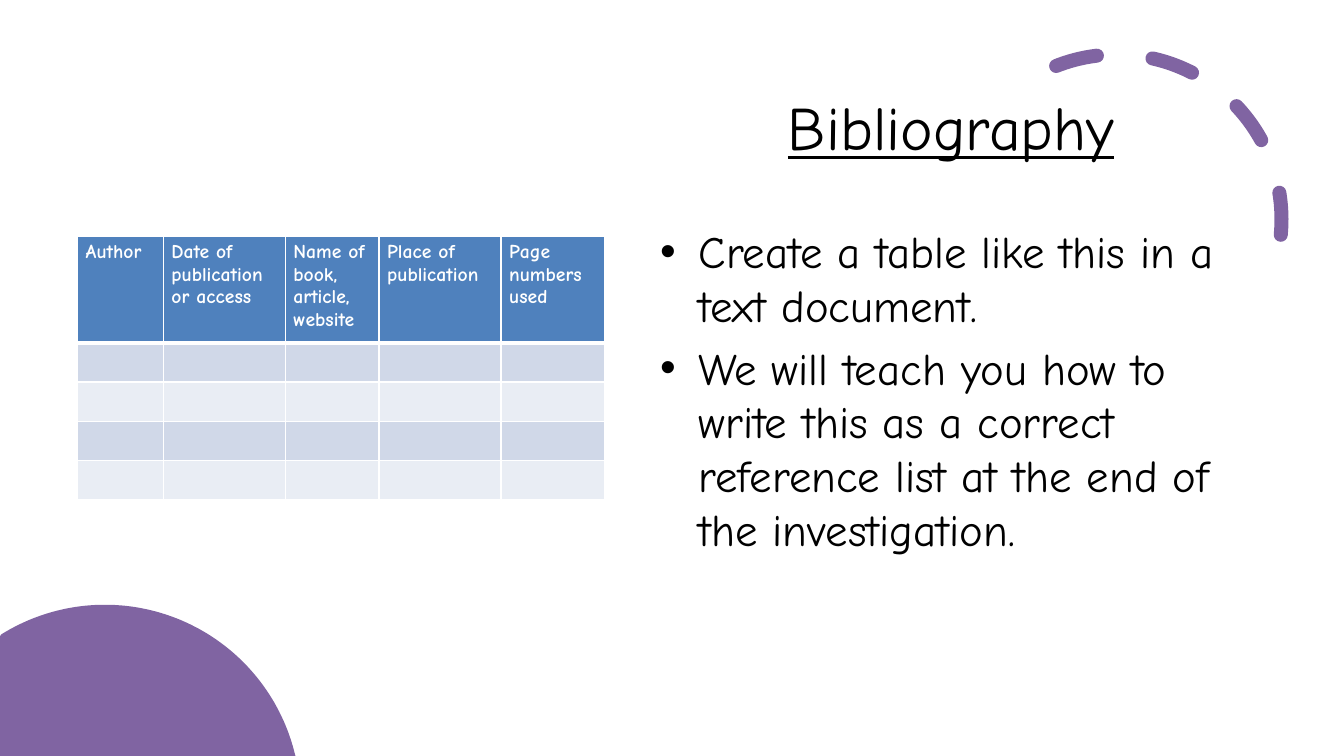
from math import cos, radians, sin

from lxml.etree import SubElement
from pptx import Presentation
from pptx.dml.color import RGBColor
from pptx.enum.dml import MSO_LINE_DASH_STYLE as DASH
from pptx.enum.shapes import MSO_SHAPE as SHAPE
from pptx.enum.text import MSO_ANCHOR as ANCHOR, PP_ALIGN as ALIGN
from pptx.oxml import parse_xml
from pptx.oxml.ns import nsdecls, qn
from pptx.util import Emu, Pt

PURPLE = RGBColor(0x80, 0x64, 0xA2)
BLUE = RGBColor(0x4F, 0x81, 0xBD)
BAND_DARK = RGBColor(0xD0, 0xD8, 0xE8)
BAND_LIGHT = RGBColor(0xE9, 0xED, 0xF4)
WHITE = RGBColor(0xFF, 0xFF, 0xFF)
BLACK = RGBColor(0, 0, 0)


def px(n):
    return Emu(round(n * 9144))


class SlideBuilder:
    font = "Comic Neue"

    def __init__(self, slide):
        self.s = slide

    def run(self, p, text, size, color, bold=None, underline=None):
        r = p.add_run()
        r.text = text
        f = r.font
        f.name, f.size, f.bold, f.underline = self.font, Pt(size), bold, underline
        f.color.rgb = color

    def frame(self, x, y, w, h, anchor=ANCHOR.TOP):
        tf = self.s.shapes.add_textbox(px(x), px(y), px(w), px(h)).text_frame
        tf.word_wrap = True
        tf.vertical_anchor = anchor
        return tf

    def title(self, text, *box):
        p = self.frame(*box, anchor=ANCHOR.MIDDLE).paragraphs[0]
        p.alignment = ALIGN.CENTER
        self.run(p, text, 44, BLACK, underline=True)

    def bullets(self, items, *box):
        tf = self.frame(*box)
        for i, item in enumerate(items):
            p = tf.add_paragraph() if i else tf.paragraphs[0]
            p.space_before = Pt(6.4)
            pPr = p._p.get_or_add_pPr()
            pPr.set("marL", str(px(38)))
            pPr.set("indent", str(px(-38)))
            SubElement(pPr, qn("a:buFont")).set("typeface", "Arial")
            SubElement(pPr, qn("a:buChar")).set("char", "•")
            self.run(p, item, 32, BLACK)

    def dashed_arc(self, x, y, size, rotation, start):
        sp = self.s.shapes.add_shape(SHAPE.ARC, px(x), px(y), px(size), px(size))
        sp.shadow.inherit = False
        sp.adjustments[0], sp.adjustments[1] = start, 0
        sp.rotation = rotation
        sp._element.spPr.find(qn("a:xfrm")).set("flipH", "1")
        sp.fill.background()
        sp.line.color.rgb = PURPLE
        sp.line.width = Pt(10)
        sp.line.dash_style = DASH.DASH
        sp.line._ln.set("cap", "rnd")

    def corner_disc(self, cx, cy, radius, bottom):
        points = [(px(max(0, cx + radius * cos(radians(a)))),
                   px(min(bottom, cy + radius * sin(radians(a)))))
                  for a in range(-123, -12)]
        fb = self.s.shapes.build_freeform(0, px(bottom))
        fb.add_line_segments(points, close=True)
        sp = fb.convert_to_shape()
        sp.shadow.inherit = False
        sp.fill.solid()
        sp.fill.fore_color.rgb = PURPLE
        sp.line.fill.background()

    def borders(self, cell, top, bottom):
        tcPr = cell._tc.get_or_add_tcPr()
        sides = (("L", 1), ("R", 1), ("T", top), ("B", bottom))
        for i, (side, width) in enumerate(sides):
            tcPr.insert(i, parse_xml(
                f'<a:ln{side} {nsdecls("a")} w="{Pt(width)}"><a:solidFill>'
                f'<a:srgbClr val="{WHITE}"/></a:solidFill></a:ln{side}>'))

    def table(self, headers, x, y, widths, heights):
        table = self.s.shapes.add_table(
            len(heights), len(widths), px(x), px(y),
            px(sum(widths)), px(sum(heights))).table
        for column, width in zip(table.columns, widths):
            column.width = px(width)
        for i, height in enumerate(heights):
            table.rows[i].height = px(height)
            for j, header in enumerate(headers):
                cell = table.cell(i, j)
                cell.margin_left = cell.margin_right = px(8)
                cell.margin_top = cell.margin_bottom = px(4)
                cell.fill.solid()
                p = cell.text_frame.paragraphs[0]
                if i == 0:
                    cell.fill.fore_color.rgb = BLUE
                    self.run(p, header, 14, WHITE, bold=True)
                else:
                    cell.fill.fore_color.rgb = BAND_DARK if i % 2 else BAND_LIGHT
                    SubElement(p._p, qn("a:endParaRPr")).set("sz", "1400")
                self.borders(cell, 3 if i == 1 else 1, 3 if i == 0 else 1)


def main():
    prs = Presentation()
    prs.slide_width, prs.slide_height = px(1333), px(750)
    s = SlideBuilder(prs.slides.add_slide(prs.slide_layouts[6]))
    s.dashed_arc(944, 54, 327, 66.1, 144.42)
    s.title("Bibliography", 645, 52, 597, 145)
    s.corner_disc(104, 794, 194, 750)
    s.bullets(["Create a table like this in a text document.",
               "We will teach you how to write this as a correct "
               "reference list at the end of the investigation."],
              645, 217, 597, 458)
    s.table(["Author", "Date of publication or access",
             "Name of book, article, website",
             "Place of publication", "Page numbers used"],
            77, 235, [85, 121, 93, 121, 103], [105] + [39] * 4)
    prs.save("out.pptx")


if __name__ == "__main__":
    main()
